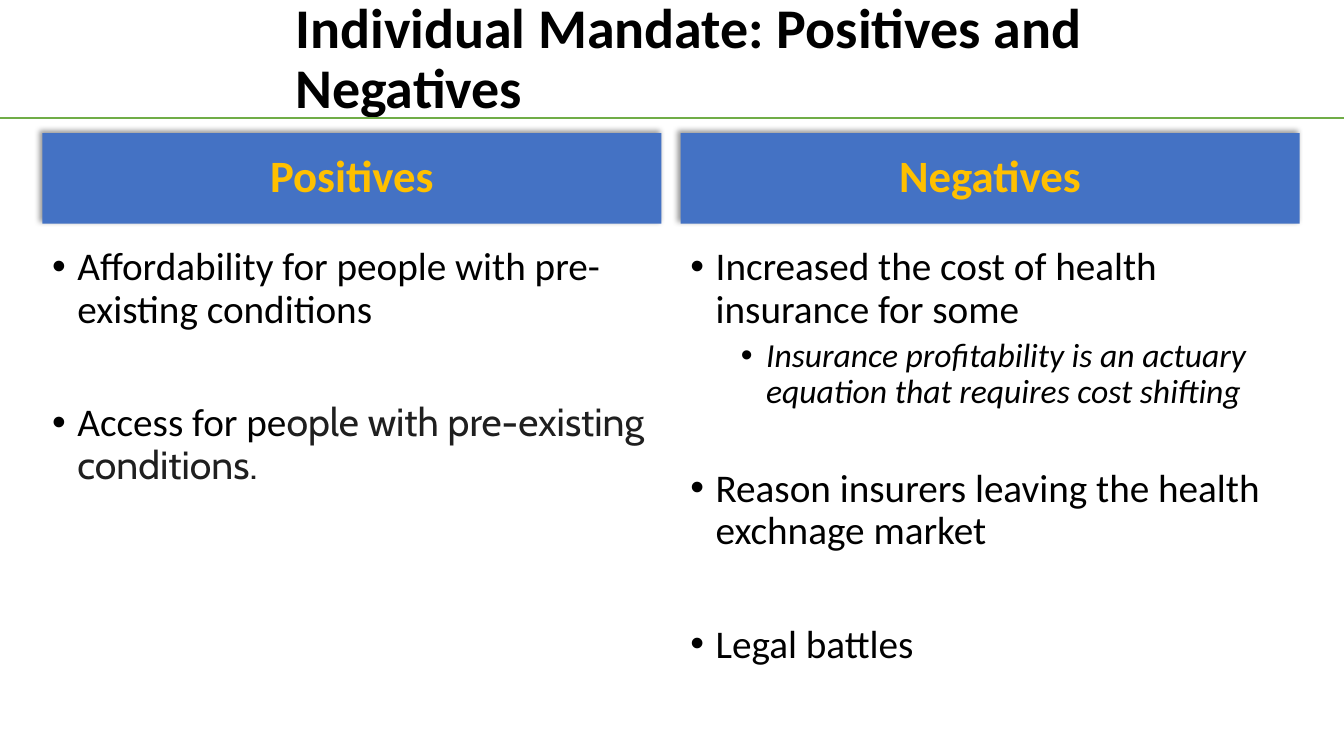
from lxml import etree
from pptx import Presentation
from pptx.dml.color import RGBColor
from pptx.enum import shapes, text
from pptx.oxml import parse_xml
from pptx.oxml.ns import nsdecls, qn
from pptx.util import Inches, Pt

COLORS = {
    "black": "000000",
    "gray": "1F1F1F",
    "blue": "4472C4",
    "gold": "FFC000",
    "green": "70AD47",
}
COLUMN_WIDTH = 6.14
SIZES = (28, 24)
INDENTS = (0.25, 0.75)

# Each bullet: level, space before, runs of (text, font, colour)
POSITIVES = [
    (0, 0, [("Affordability for people with pre-existing conditions", "Calibri", "black")]),
    (0, 51, [("Access for pe", "Calibri", "black"),
             ("ople with pre-existing conditions.", "Cabin", "gray")]),
]
NEGATIVES = [
    (0, 0, [("Increased the cost of health insurance for some", "Calibri", "black")]),
    (1, 5, [("Insurance profitability is an actuary equation that requires cost shifting",
             "Calibri", "black")]),
    (0, 41, [("Reason insurers leaving the health exchnage market", "Calibri", "black")]),
    (0, 51, [("Legal battles", "Calibri", "black")]),
]


def rgb(name):
    return RGBColor.from_string(COLORS[name])


def style(font, size, color, bold=False, name="Calibri"):
    font.name = name
    font.size = Pt(size)
    font.bold = bold
    font.color.rgb = rgb(color)


def add_title(slide, wording):
    title = slide.shapes.title
    title.left, title.top = Inches(2.83), Inches(0.2)
    title.width, title.height = Inches(10.06), Inches(0.8)
    frame = title.text_frame
    frame.word_wrap = True
    frame.auto_size = text.MSO_AUTO_SIZE.NONE
    frame.vertical_anchor = text.MSO_ANCHOR.MIDDLE
    heading = frame.paragraphs[0]
    heading.text = wording
    heading.alignment = text.PP_ALIGN.LEFT
    heading.line_spacing = 0.9
    style(heading.font, 40, "black", bold=True)


def add_rule(slide):
    rule = slide.shapes.add_connector(
        shapes.MSO_CONNECTOR.STRAIGHT, 0, Inches(1.17), Inches(13.33), Inches(1.17))
    rule.line.color.rgb = rgb("green")
    rule.line.width = Pt(1.25)
    etree.SubElement(rule._element.spPr, qn("a:effectLst"))


def add_shadow(shape):
    """Give the shape a soft shadow towards its upper left."""
    shape.shadow.inherit = False
    effects = shape._element.spPr.find(qn("a:effectLst"))
    effects.append(parse_xml(
        f'<a:outerShdw {nsdecls("a")} blurRad="{Pt(4)}" dist="{Pt(3)}" '
        f'dir="{225 * 60000}" algn="br" rotWithShape="0">'
        f'<a:srgbClr val="{COLORS["black"]}"><a:alpha val="40000"/></a:srgbClr>'
        '</a:outerShdw>'))


def add_header(slide, left, wording):
    header = slide.shapes.add_shape(
        shapes.MSO_SHAPE.RECTANGLE, Inches(left), Inches(1.32),
        Inches(COLUMN_WIDTH), Inches(0.9))
    header.fill.solid()
    header.fill.fore_color.rgb = rgb("blue")
    header.line.fill.background()
    add_shadow(header)
    frame = header.text_frame
    frame.vertical_anchor = text.MSO_ANCHOR.MIDDLE
    label = frame.paragraphs[0]
    label.text = wording
    label.alignment = text.PP_ALIGN.CENTER
    label.line_spacing = 0.9
    style(label.font, 32, "gold", bold=True)


def add_bullet(paragraph, indent):
    props = paragraph._p.get_or_add_pPr()
    props.set("marL", str(Inches(indent)))
    props.set("indent", str(Inches(-0.25)))
    etree.SubElement(props, qn("a:buFont"), typeface="Arial")
    etree.SubElement(props, qn("a:buChar"), char="•")


def add_points(slide, left, width, points):
    box = slide.shapes.add_textbox(
        Inches(left), Inches(2.4), Inches(width), Inches(4.37))
    frame = box.text_frame
    frame.word_wrap = True
    for number, (level, space, runs) in enumerate(points):
        point = frame.add_paragraph() if number else frame.paragraphs[0]
        point.level = level
        add_bullet(point, INDENTS[level])
        point.line_spacing = 0.9
        point.space_before = Pt(space)
        style(point.font, SIZES[level], "black")
        point.font.italic = level == 1
        for wording, font, color in runs:
            run = point.add_run()
            run.text = wording
            if len(runs) > 1:
                style(run.font, SIZES[level], color, name=font)


def main():
    deck = Presentation()
    deck.slide_width, deck.slide_height = Inches(13.33), Inches(7.5)
    slide = deck.slides.add_slide(deck.slide_layouts[5])
    add_rule(slide)
    add_header(slide, 0.42, "Positives")
    add_points(slide, 0.42, COLUMN_WIDTH, POSITIVES)
    add_header(slide, 6.75, "Negatives")
    add_points(slide, 6.75, 6.17, NEGATIVES)
    add_title(slide, "Individual Mandate: Positives and Negatives")
    deck.save("out.pptx")


if __name__ == "__main__":
    main()
